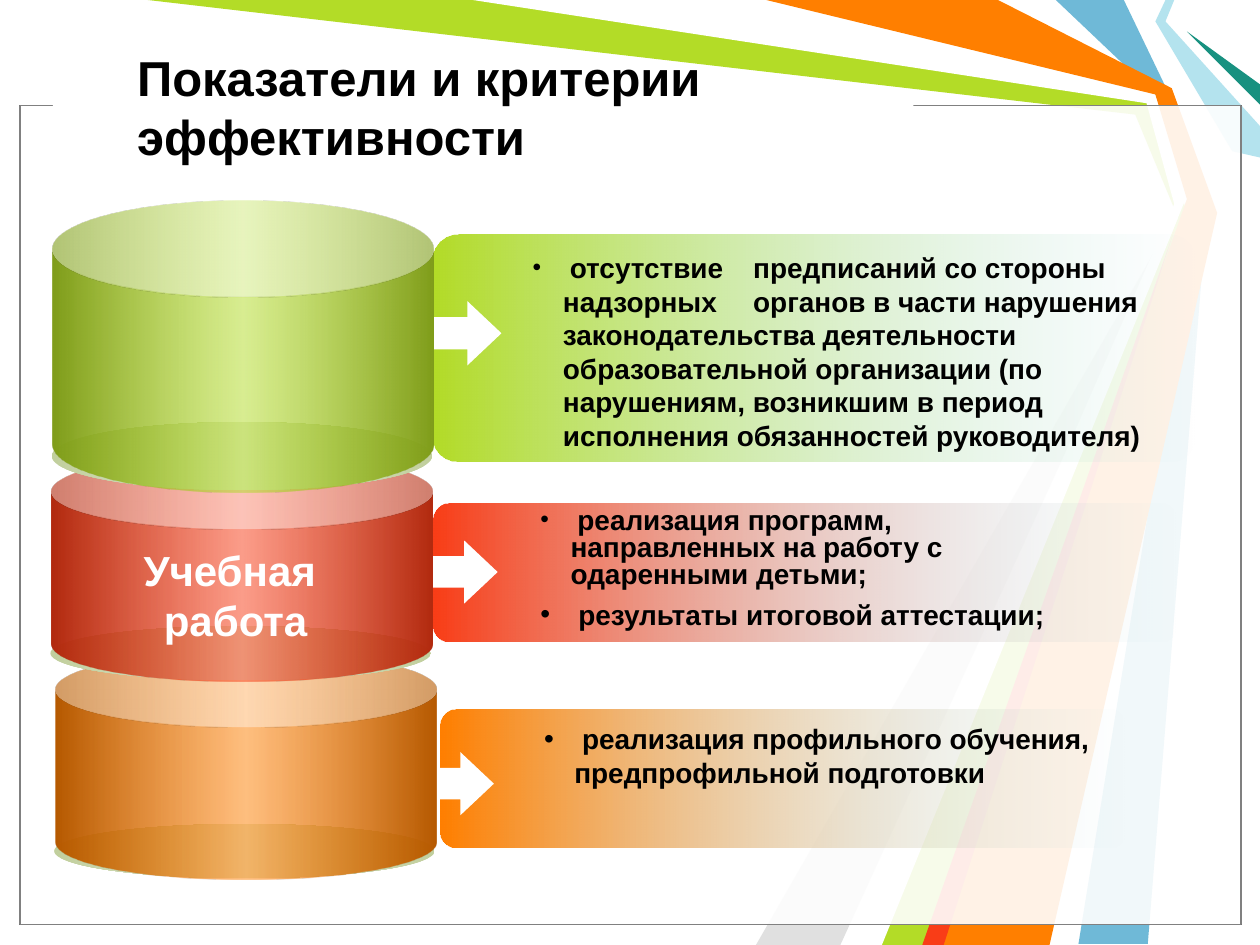
from lxml import etree
from pptx import Presentation
from pptx.dml.color import RGBColor
from pptx.enum.shapes import MSO_SHAPE as Preset
from pptx.enum.text import MSO_ANCHOR as Anchor, PP_ALIGN as Align
from pptx.oxml import parse_xml
from pptx.oxml.ns import nsdecls, qn
from pptx.util import Inches, Pt

LIME, RED, ORANGE = "B3DC27", "F93D17", "FF7F00"
SKY, ICE, WHITE, BLACK = "6FB9D7", "B4E3EE", "FFFFFF", "000000"
GREY, TEAL = "E0E0E0", "189180"

# Ribbons of the backdrop, from back to front
RIBBONS = [
    (SKY, [(8.92, 0), (9.29, 0.77), (9.58, 1.67), (9.11, 7.49), (8.56, 7.49),
           (9.5, 1.67), (9.17, 0.75), (8.38, 0)]),
    (LIME, [(1.17, 0), (3.83, 0), (9.14, 0.78), (9.42, 1.69), (7.42, 7.5),
            (6.92, 7.5), (9.35, 1.73), (9.01, 0.91)]),
    (GREY, [(6.67, 7.5), (9.27, 1.81), (6, 7.5)]),
    (WHITE, [(3.75, 0), (9.1, 0.82), (9.32, 1.62), (6.75, 7.5), (7, 7.5),
             (9.41, 1.58), (9.17, 0.75), (6, 0)]),
    (ICE, [(9.25, 0), (9.17, 0.17), (9.78, 1.2), (10, 1.25), (10, 1),
           (9.25, 0.17), (9.32, 0)]),
    (TEAL, [(10, 0.83), (9.42, 0.25), (10, 0.67)]),
    (ORANGE, [(6.08, 0), (7.92, 0), (9.3, 0.7), (9.66, 1.69), (8.33, 7.5),
              (7.33, 7.5), (9.42, 1.58), (9.17, 0.75)]),
    (RED, [(7.32, 7.5), (9.32, 1.83), (7.49, 7.5)]),
]

# Each criterion: colour, panel, text box, arrow, and its paragraphs as (text, size) runs
CRITERIA = [
    (LIME, (3.43, 1.86, 6.06, 1.8), (4.13, 1.94, 5.2, 1.72), (3.34, 2.39, 0.64, 0.51), 1,
     [[(" ", 14), ("отсутствие\tпредписаний со стороны надзорных\tорганов в части "
                   "нарушения законодательства деятельности образовательной "
                   "организации (по нарушениям, возникшим в период исполнения "
                   "обязанностей руководителя)", 16)]]),
    (RED, (3.44, 4, 5.9, 1.09), (4.19, 3.99, 4.52, 1.39), (3.31, 4.29, 0.64, 0.5), 0.8,
     [[(" ", 14), ("реализация программ, направленных на работу с одаренными детьми;", 16)],
      [(" результаты итоговой аттестации;", 16)]]),
    (ORANGE, (3.5, 5.63, 5.43, 1.1), (4.22, 5.68, 4.72, 0.64), (3.28, 5.97, 0.64, 0.5), 1,
     [[(" реализация профильного обучения, предпрофильной подготовки", 16)]]),
]

# Drums from the bottom of the stack up: colour, rim, body
DRUMS = [
    (ORANGE, (0.43, 6.54, 3.02, 0.43), (0.44, 5.17, 3.02, 1.81)),
    (RED, (0.4, 4.97, 3.02, 0.43), (0.41, 3.6, 3.02, 1.81)),
    (LIME, (0.41, 3.35, 3.02, 0.54), (0.42, 1.59, 3.02, 2.32)),
]


def rgb(code):
    return RGBColor.from_string(code)


def paint(shape, color, alpha=None):
    """Flat fill without line or shadow."""
    shape.shadow.inherit = False
    shape.line.fill.background()
    shape.fill.solid()
    shape.fill.fore_color.rgb = rgb(color)
    if alpha is not None:
        tint = shape.fill._xPr.find(".//" + qn("a:srgbClr"))
        etree.SubElement(tint, qn("a:alpha")).set("val", str(alpha * 1000))


def paint_gradient(shape, *stops):
    """Left-to-right gradient; a stop is (percent, colour, {modifier: percent})."""
    paint(shape, WHITE)
    marks = "".join(
        f'<a:gs pos="{pos * 1000}"><a:srgbClr val="{color}">'
        + "".join(f'<a:{name} val="{int(share * 1000)}"/>' for name, share in mods.items())
        + "</a:srgbClr></a:gs>" for pos, color, mods in stops)
    gradient = parse_xml(f'<a:gradFill {nsdecls("a")} rotWithShape="1"><a:gsLst>{marks}'
                         '</a:gsLst><a:lin ang="0" scaled="1"/></a:gradFill>')
    props = shape.fill._xPr
    props.replace(props.find(qn("a:solidFill")), gradient)


def add_preset(slide, preset, box, *adjustments):
    shape = slide.shapes.add_shape(preset, *map(Inches, box))
    for index, value in enumerate(adjustments):
        shape.adjustments[index] = value
    return shape


def add_frame_text(slide, box):
    frame = slide.shapes.add_textbox(*map(Inches, box)).text_frame
    frame.word_wrap = True
    return frame


def style_run(run, size, color):
    run.font.name, run.font.size, run.font.bold = "Arial", Pt(size), True
    run.font.color.rgb = rgb(color)


def draw_backdrop(slide, box):
    for color, points in RIBBONS:
        corners = [(Inches(x), Inches(y)) for x, y in points]
        builder = slide.shapes.build_freeform(*corners[0], scale=1.0)
        builder.add_line_segments(corners[1:], close=True)
        paint(builder.convert_to_shape(), color)
    # Two translucent sheets fade the ribbons
    for edge in (BLACK, "808080"):
        sheet = add_preset(slide, Preset.RECTANGLE, box)
        paint(sheet, WHITE, alpha=69)
        sheet.line.color.rgb = rgb(edge)
        sheet.line.width = Pt(0.75)
    # Gap in the top edge behind the title
    paint(add_preset(slide, Preset.RECTANGLE, (0.42, 0.74, 6.83, 0.17)), WHITE)


def draw_title(slide, box):
    frame = add_frame_text(slide, box)
    frame.vertical_anchor = Anchor.MIDDLE
    frame.text = "Показатели и критерии эффективности"
    style_run(frame.paragraphs[0].runs[0], 28, BLACK)


def draw_panel(slide, box, color):
    panel = add_preset(slide, Preset.ROUNDED_RECTANGLE, box, 0.115)
    paint_gradient(panel, (0, color, {}), (100, ICE, {"alpha": 0}))


def draw_bullets(slide, box, spacing, items):
    frame = add_frame_text(slide, box)
    for index, pieces in enumerate(items):
        paragraph = frame.add_paragraph() if index else frame.paragraphs[0]
        if index:
            paragraph.space_before = Pt(8)
        paragraph.line_spacing = spacing
        props = paragraph._p.get_or_add_pPr()
        props.set("marL", str(Inches(0.24)))
        props.set("indent", str(-Inches(0.24)))
        etree.SubElement(props, qn("a:buFont")).set("typeface", "Arial")
        etree.SubElement(props, qn("a:buChar")).set("char", "•")
        if any("\t" in text for text, _ in pieces):
            stop = etree.SubElement(etree.SubElement(props, qn("a:tabLst")), qn("a:tab"))
            stop.set("pos", str(Inches(1.75)))
            stop.set("algn", "l")
        for text, size in pieces:
            run = paragraph.add_run()
            run.text = text
            style_run(run, size, BLACK)


def draw_drum(slide, color, rim_box, body_box):
    rim = add_preset(slide, Preset.OVAL, rim_box)
    paint_gradient(rim, (0, "C1CF9D", {}), (50, "E5EBD5", {}), (100, "C1CF9D", {}))
    body = add_preset(slide, Preset.CAN, body_box, 0.332)
    dark = {"shade": 46.27}
    paint_gradient(body, (0, color, dark), (50, color, {"alpha": 50}), (100, color, dark))


def draw_drum_label(slide, box):
    frame = add_frame_text(slide, box)
    frame.text = "Учебная \nработа"
    for paragraph in frame.paragraphs:
        paragraph.alignment = Align.CENTER
        run = paragraph.runs[0]
        style_run(run, 24, WHITE)
        shadow = parse_xml(
            f'<a:effectLst {nsdecls("a")}><a:outerShdw dist="25400" dir="2700000">'
            '<a:srgbClr val="000000"/></a:outerShdw></a:effectLst>')
        run.font._rPr.find(qn("a:solidFill")).addnext(shadow)


def main():
    deck = Presentation()
    deck.slide_width, deck.slide_height = Inches(10), Inches(7.5)
    slide = deck.slides.add_slide(deck.slide_layouts[6])
    draw_backdrop(slide, (0.16, 0.84, 9.69, 6.5))
    draw_title(slide, (0.99, 0.22, 6.89, 1.25))
    for color, panel, words, arrow, spacing, items in CRITERIA:
        draw_panel(slide, panel, color)
        draw_bullets(slide, words, spacing, items)
        paint(add_preset(slide, Preset.RIGHT_ARROW, arrow, 0.5, 0.53), WHITE)
    for drum in DRUMS:
        draw_drum(slide, *drum)
    draw_drum_label(slide, (0.47, 4.27, 2.8, 0.91))
    deck.save("out.pptx")


if __name__ == "__main__":
    main()
